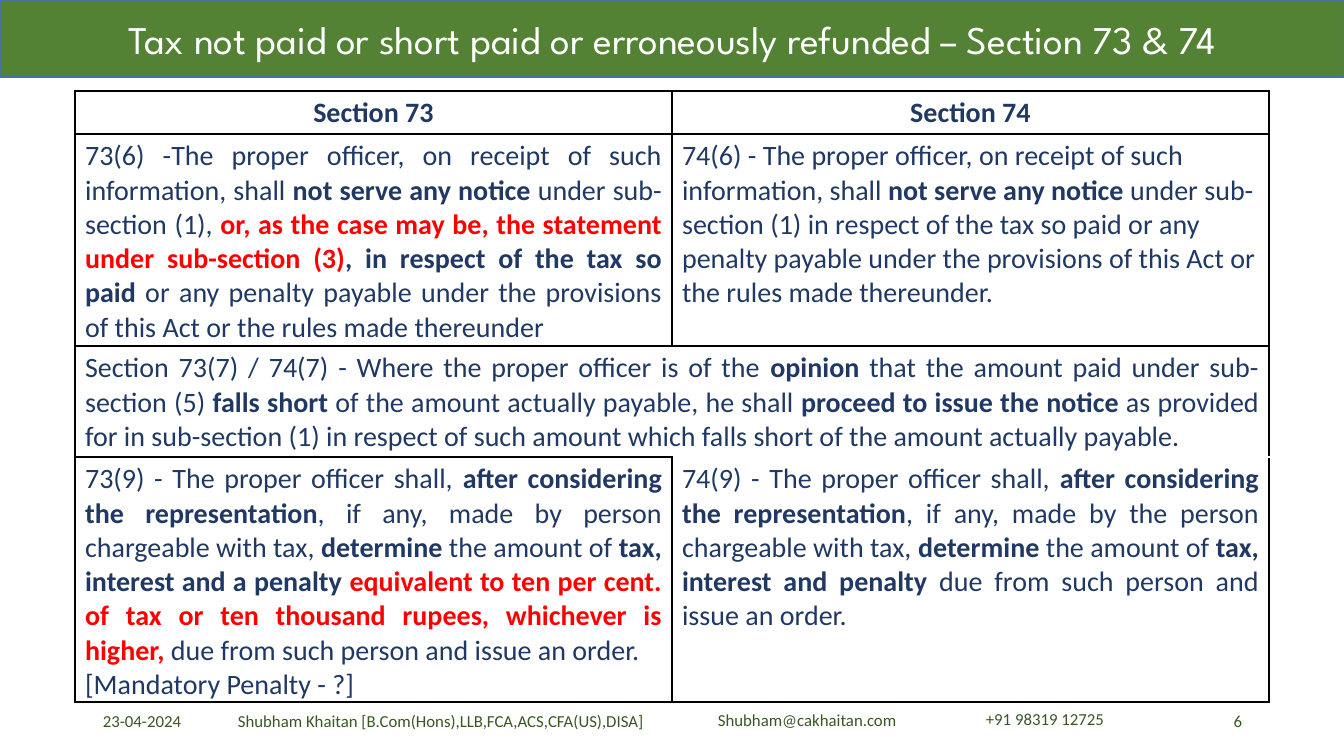
from dataclasses import dataclass
from typing import NamedTuple

from lxml import etree
from pptx import Presentation
from pptx.dml.color import RGBColor
from pptx.enum import shapes, text
from pptx.oxml import ns
from pptx import util as u

EMU_PER_PX = 914400 / 100.8
LEFT, CENTER, RIGHT, JUSTIFY = (
    text.PP_ALIGN.LEFT, text.PP_ALIGN.CENTER, text.PP_ALIGN.RIGHT, text.PP_ALIGN.JUSTIFY)
TOP, MIDDLE = text.MSO_ANCHOR.TOP, text.MSO_ANCHOR.MIDDLE


@dataclass(frozen=True)
class Theme:
    banner: str = "548235"
    banner_line: str = "43739E"
    white: str = "FFFFFF"
    black: str = "000000"
    navy: str = "203864"
    red: str = "FF0000"
    footer: str = "385723"
    title_font: str = "League Spartan"
    body_font: str = "Calibri"
    title_size: int = 28
    body_size: int = 20
    footer_size: int = 12


THEME = Theme()


class Box(NamedTuple):
    left: int
    top: int
    width: int
    height: int


class Run(NamedTuple):
    words: str
    bold: bool = False
    color: str = THEME.navy


@dataclass(frozen=True)
class CellText:
    row: int
    column: int
    paragraphs: list[list[Run]]
    align: text.PP_ALIGN = JUSTIFY
    top_line: str = THEME.black


@dataclass(frozen=True)
class FooterItem:
    words: str
    box: Box
    align: text.PP_ALIGN = LEFT
    anchor: text.MSO_ANCHOR = MIDDLE


def strong(words: str) -> Run:
    return Run(words, True)


def alert(words: str) -> Run:
    return Run(words, True, THEME.red)


TABLE_BOX = Box(75, 91, 1194, 611)
ROW_HEIGHTS = (43, 212, 111, 245)
MERGED_ROW = 2
CELLS = (
    CellText(0, 0, [[strong("Section 73")]], CENTER),
    CellText(0, 1, [[strong("Section 74")]], CENTER),
    CellText(1, 0, [[
        Run("73(6) -The proper officer, on receipt of such information, shall "),
        strong("not serve any notice"),
        Run(" under sub-section (1), "),
        alert("or, as the case may be, the statement under sub-section (3)"),
        strong(", in respect of the tax so paid"),
        Run(" or any penalty payable under the provisions of this Act or the rules made thereunder"),
    ]]),
    CellText(1, 1, [[
        Run("74(6) - The proper officer, on receipt of such information, shall "),
        strong("not serve any notice"),
        Run(" under sub-section (1) in respect of the tax so paid or any penalty payable "
            "under the provisions of this Act or the rules made thereunder."),
    ]], LEFT),
    CellText(2, 0, [[
        Run("Section 73(7) / 74(7) - Where the proper officer is of the "),
        strong("opinion"),
        Run(" that the amount paid under sub-section (5) "),
        strong("falls short"),
        Run(" of the amount actually payable, he shall "),
        strong("proceed to issue the notice"),
        Run(" as provided for in sub-section (1) in respect of such amount which falls short "
            "of the amount actually payable."),
    ]]),
    CellText(3, 0, [[
        Run("73(9) - The proper officer shall, "),
        strong("after considering the representation"),
        Run(", if any, made by person chargeable with tax, "),
        strong("determine "),
        Run("the amount of "),
        strong("tax, interest and a penalty "),
        alert("equivalent to ten per cent. of tax or ten thousand rupees, whichever is higher,"),
        Run(" due from such person and issue an order."),
    ], [Run("[Mandatory Penalty - ?]")]]),
    CellText(3, 1, [[
        Run("74(9) - The proper officer shall, "),
        strong("after considering the representation"),
        Run(", if any, made by the person chargeable with tax, "),
        strong("determine"),
        Run(" the amount of "),
        strong("tax, interest and penalty "),
        Run("due from such person and issue an order."),
    ]], top_line=THEME.white),
)
FOOTER = (
    FooterItem("23-04-2024", Box(93, 701, 302, 40)),
    FooterItem("Shubham Khaitan [B.Com(Hons),LLB,FCA,ACS,CFA(US),DISA]",
               Box(214, 701, 454, 40), CENTER),
    FooterItem("6", Box(950, 701, 302, 40), RIGHT),
    FooterItem("Shubham@cakhaitan.com", Box(708, 705, 294, 30), anchor=TOP),
    FooterItem("+91 98319 12725", Box(976, 704, 294, 30), anchor=TOP),
)


def px(length: int) -> u.Emu:
    return u.Emu(round(length * EMU_PER_PX))


def emu(box: Box) -> list[u.Emu]:
    return [px(length) for length in box]


def rgb(color: str) -> RGBColor:
    return RGBColor.from_string(color)


def set_font(font, name: str, size: int, color: str) -> None:
    font.name, font.size = name, u.Pt(size)
    font.color.rgb = rgb(color)


def draw_banner(slide, words: str) -> None:
    shape = slide.shapes.add_shape(shapes.MSO_SHAPE.RECTANGLE, *emu(Box(0, 0, 1344, 77)))
    shape.shadow.inherit = False
    shape.fill.solid()
    shape.fill.fore_color.rgb = rgb(THEME.banner)
    shape.line.color.rgb = rgb(THEME.banner_line)
    shape.line.width = u.Pt(1)
    shape.text_frame.vertical_anchor = MIDDLE
    paragraph = shape.text_frame.paragraphs[0]
    paragraph.text, paragraph.alignment = words, CENTER
    set_font(paragraph.font, THEME.title_font, THEME.title_size, THEME.white)


def draw_footer_item(slide, item: FooterItem) -> None:
    frame = slide.shapes.add_textbox(*emu(item.box)).text_frame
    frame.word_wrap, frame.vertical_anchor = True, item.anchor
    paragraph = frame.paragraphs[0]
    paragraph.text, paragraph.alignment = item.words, item.align
    set_font(paragraph.font, THEME.body_font, THEME.footer_size, THEME.footer)


def style_cell(cell, top: str = THEME.black, bottom: str = THEME.black) -> None:
    properties = cell._tc.get_or_add_tcPr()
    sides = {"lnL": THEME.black, "lnR": THEME.black, "lnT": top, "lnB": bottom}
    for side, color in sides.items():
        line = etree.SubElement(properties, ns.qn(f"a:{side}"), w=str(u.Pt(1)))
        fill = etree.SubElement(line, ns.qn("a:solidFill"))
        etree.SubElement(fill, ns.qn("a:srgbClr"), val=color)
    cell.fill.solid()
    cell.fill.fore_color.rgb = rgb(THEME.white)
    cell.margin_bottom = 0


def write_cell(cell, content: CellText) -> None:
    style_cell(cell, content.top_line)
    for index, runs in enumerate(content.paragraphs):
        frame = cell.text_frame
        paragraph = frame.add_paragraph() if index else frame.paragraphs[0]
        paragraph.alignment = content.align
        for part in runs:
            run = paragraph.add_run()
            run.text, run.font.bold = part.words, part.bold
            set_font(run.font, THEME.body_font, THEME.body_size, part.color)


def draw_table(slide) -> None:
    table = slide.shapes.add_table(len(ROW_HEIGHTS), 2, *emu(TABLE_BOX)).table
    table.first_row = table.horz_banding = False
    for row, height in zip(table.rows, ROW_HEIGHTS):
        row.height = px(height)
    table.cell(MERGED_ROW, 0).merge(table.cell(MERGED_ROW, 1))
    style_cell(table.cell(MERGED_ROW, 1), bottom=THEME.white)
    for content in CELLS:
        write_cell(table.cell(content.row, content.column), content)


def main() -> None:
    presentation = Presentation()
    presentation.slide_width, presentation.slide_height = px(1344), px(756)
    slide = presentation.slides.add_slide(presentation.slide_layouts[6])
    draw_banner(slide, "Tax not paid or short paid or erroneously refunded – Section 73 & 74")
    for item in FOOTER:
        draw_footer_item(slide, item)
    draw_table(slide)
    presentation.save("out.pptx")


if __name__ == "__main__":
    main()
